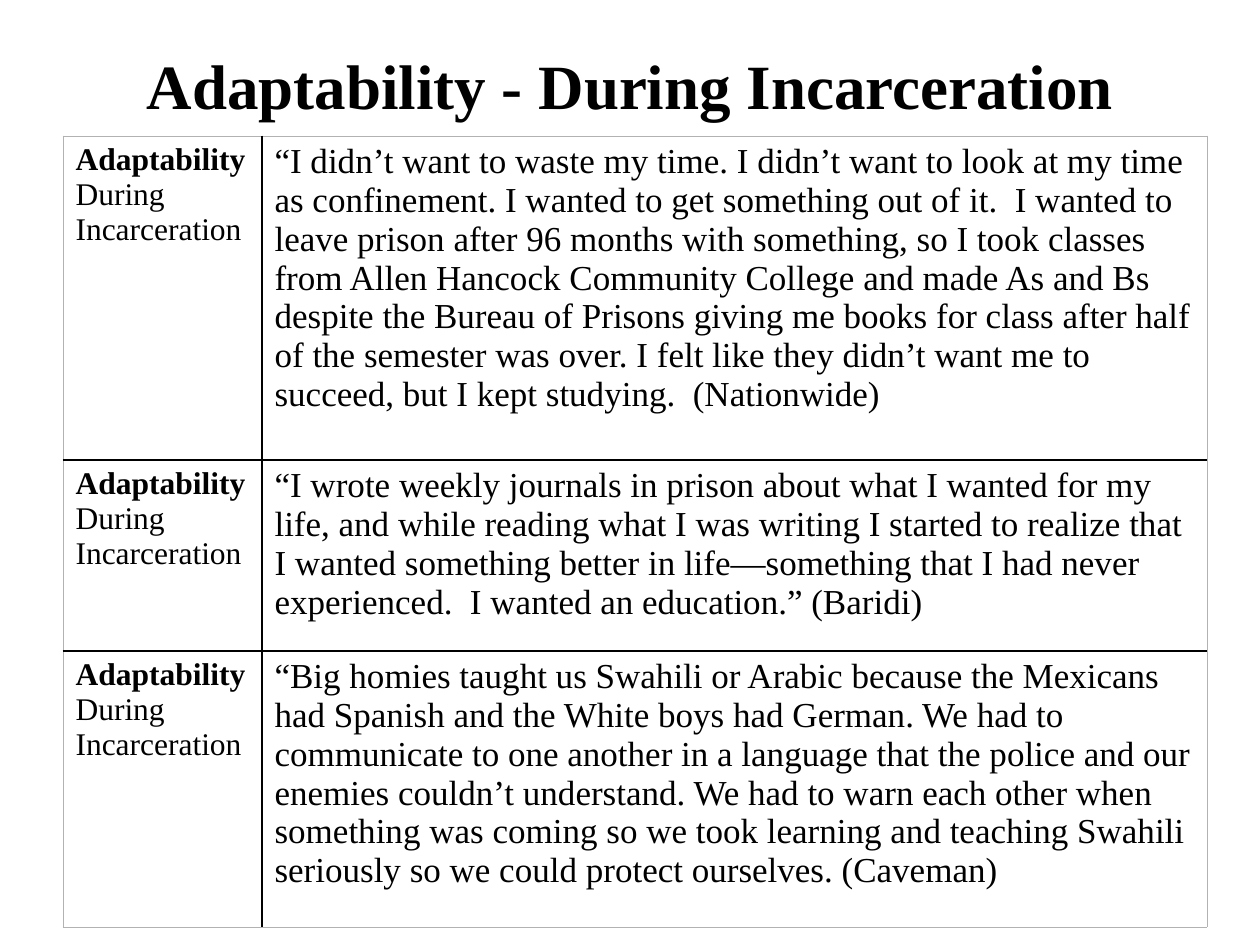
from lxml import etree
from pptx import Presentation
from pptx.dml.color import RGBColor as RGB
from pptx.enum.text import MSO_ANCHOR as ANCHOR, PP_ALIGN as ALIGN
from pptx.oxml.ns import qn
from pptx.util import Pt

PX = 914400 / 126
COLORS = {"text": "000000", "inner": "000000", "outer": "B2B2B2"}
FORMATS = {
    "title": {"size": Pt(36), "bold": True},
    "theme": {"size": Pt(18), "bold": True},
    "stage": {"size": Pt(18), "bold": False},
    "quote": {"size": Pt(20), "bold": False},
}
COLS = [199, 945]
ROWS = [324, 191, 276]
QUOTES = [
    "“I didn’t want to waste my time. I didn’t want to look at my time as "
    "confinement. I wanted to get something out of it.  I wanted to leave prison "
    "after 96 months with something, so I took classes from Allen Hancock Community "
    "College and made As and Bs despite the Bureau of Prisons giving me books for "
    "class after half of the semester was over. I felt like they didn’t want me to "
    "succeed, but I kept studying.  (Nationwide)",
    "“I wrote weekly journals in prison about what I wanted for my life, and while "
    "reading what I was writing I started to realize that I wanted something better "
    "in life—something that I had never experienced.  I wanted an education.” (Baridi)",
    "“Big homies taught us Swahili or Arabic because the Mexicans had Spanish and the "
    "White boys had German. We had to communicate to one another in a language that "
    "the police and our enemies couldn’t understand. We had to warn each other when "
    "something was coming so we took learning and teaching Swahili seriously so we "
    "could protect ourselves. (Caveman)",
]


def px(n):
    return round(n * PX)


def write(tf, parts):
    """Fill a text frame with one paragraph per (text, format) pair."""
    for i, (text, kind) in enumerate(parts):
        p = tf.paragraphs[0] if i == 0 else tf.add_paragraph()
        r = p.add_run()
        r.text = text
        r.font.name = "Times New Roman"
        r.font.color.rgb = RGB.from_string(COLORS["text"])
        for name, value in FORMATS[kind].items():
            setattr(r.font, name, value)


prs = Presentation()
prs.slide_width, prs.slide_height = px(1260), px(945)
s = prs.slides.add_slide(prs.slide_layouts[6])

# Title
tf = s.shapes.add_textbox(px(126), px(32), px(1008), px(104)).text_frame
tf.word_wrap = True
tf.vertical_anchor = ANCHOR.MIDDLE
write(tf, [("Adaptability - During Incarceration", "title")])
tf.paragraphs[0].alignment = ALIGN.CENTER

# Table of quotes
table = s.shapes.add_table(len(ROWS), len(COLS), px(63), px(136),
                           px(sum(COLS)), px(sum(ROWS))).table
table.first_row = table.horz_banding = False
for col, width in zip(table.columns, COLS):
    col.width = px(width)
for row, height in zip(table.rows, ROWS):
    row.height = px(height)

for i, quote in enumerate(QUOTES):
    write(table.cell(i, 0).text_frame,
          [("Adaptability", "theme"), ("During Incarceration", "stage")])
    write(table.cell(i, 1).text_frame, [(quote, "quote")])

    # Cell borders: black inside, thin grey around the table
    for j in range(len(COLS)):
        cell = table.cell(i, j)
        tc_pr = cell._tc.get_or_add_tcPr()
        outer = {"lnL": j == 0, "lnR": j == len(COLS) - 1,
                 "lnT": i == 0, "lnB": i == len(ROWS) - 1}
        for side, is_outer in outer.items():
            ln = etree.SubElement(tc_pr, qn(f"a:{side}"),
                                  w=str(Pt(0.5 if is_outer else 1)))
            fill = etree.SubElement(ln, qn("a:solidFill"))
            etree.SubElement(fill, qn("a:srgbClr"),
                             val=COLORS["outer" if is_outer else "inner"])
        cell.fill.background()

prs.save("out.pptx")
